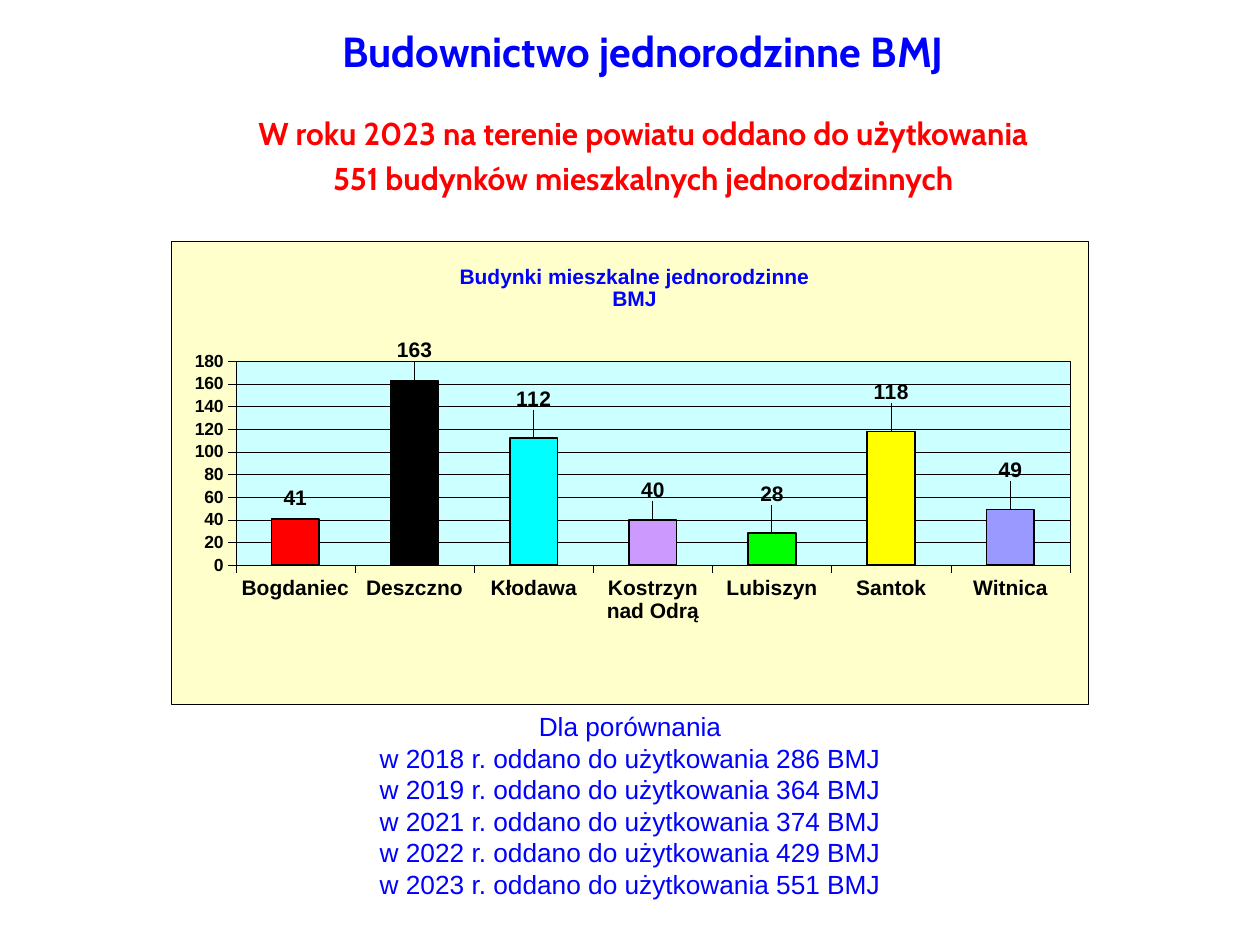
from dataclasses import dataclass

from lxml.etree import _Element as Element
from pptx import Presentation
from pptx.chart.chart import Chart
from pptx.chart.data import CategoryChartData
from pptx.dml.color import RGBColor
from pptx.dml.line import LineFormat
from pptx.enum.chart import XL_CHART_TYPE as ChartType
from pptx.enum.chart import XL_LABEL_POSITION as LabelPosition
from pptx.enum.chart import XL_TICK_MARK as TickMark
from pptx.enum.text import PP_ALIGN as Align
from pptx.oxml import parse_xml
from pptx.oxml.ns import nsdecls, qn
from pptx.slide import Slide
from pptx.text.text import Font
from pptx.util import Inches, Pt

WIDTH, HEIGHT = Inches(10), Inches(7.5)
COLUMN, ROW = WIDTH / 100, HEIGHT / 100
BLUE, RED, BLACK = "0000FF", "FF0000", "000000"


@dataclass(frozen=True)
class Area:
    column: float
    row: float
    columns: float
    rows: float

    def emu(self) -> tuple[int, int, int, int]:
        return (int(self.column * COLUMN), int(self.row * ROW),
                int(self.columns * COLUMN), int(self.rows * ROW))


@dataclass(frozen=True)
class Line:
    text: str
    size: float
    color: str
    font: str = "Arial"
    bold: bool = False
    before: float = 0
    pitch: float | None = None


@dataclass(frozen=True)
class Commune:
    name: str
    buildings: int
    color: str
    label_rise: float


HEADING = [
    Line("Budownictwo jednorodzinne BMJ", 24, BLUE, "Cabin", True),
    Line("W roku 2023 na terenie powiatu oddano do użytkowania",
         18, RED, "Cabin", True, 22),
    Line("551 budynków mieszkalnych jednorodzinnych", 18, RED, "Cabin", True, 4),
]
YEARS = {2018: 286, 2019: 364, 2021: 374, 2022: 429, 2023: 551}
COMPARISON = [Line(text, 15, BLUE, pitch=18) for text in (
    "Dla porównania",
    *(f"w {year} r. oddano do użytkowania {count} BMJ"
      for year, count in YEARS.items()))]
COMMUNES = [
    Commune("Bogdaniec", 41, "FF0000", 0.01),
    Commune("Deszczno", 163, "000000", 0.03),
    Commune("Kłodawa", 112, "00FFFF", 0.05),
    Commune("Kostrzyn nad Odrą", 40, "CC99FF", 0.03),
    Commune("Lubiszyn", 28, "00FF00", 0.05),
    Commune("Santok", 118, "FFFF00", 0.05),
    Commune("Witnica", 49, "9999FF", 0.05),
]


def rgb(color: str) -> RGBColor:
    return RGBColor.from_string(color)


def style(font: Font, size: float, color: str = BLACK,
          name: str = "Arial", bold: bool = True) -> None:
    font.size, font.name, font.bold = Pt(size), name, bold
    font.color.rgb = rgb(color)


def stroke(line: LineFormat, width: float = 0.25) -> None:
    line.color.rgb = rgb(BLACK)
    line.width = Pt(width)


def add_lines(slide: Slide, area: Area, lines: list[Line]) -> None:
    frame = slide.shapes.add_textbox(*area.emu()).text_frame
    frame.word_wrap = True
    for number, line in enumerate(lines):
        paragraph = frame.add_paragraph() if number else frame.paragraphs[0]
        paragraph.text = line.text
        paragraph.alignment = Align.CENTER
        paragraph.space_before = Pt(line.before)
        if line.pitch:
            paragraph.line_spacing = Pt(line.pitch)
        style(paragraph.font, line.size, line.color, line.font, line.bold)


def place(parent: Element, index: int, **settings: float | str) -> None:
    for previous in parent.findall(qn("c:layout")):
        parent.remove(previous)
    values = "".join(f'<c:{tag} val="{value}"/>' for tag, value in settings.items())
    parent.insert(index, parse_xml(
        f'<c:layout {nsdecls("c")}><c:manualLayout>{values}'
        "</c:manualLayout></c:layout>"))


def background(color: str) -> Element:
    return parse_xml(
        f'<c:spPr {nsdecls("c", "a")}><a:solidFill><a:srgbClr val="{color}"/>'
        f'</a:solidFill><a:ln w="{Pt(0.25)}"><a:solidFill><a:srgbClr val="{BLACK}"/>'
        "</a:solidFill></a:ln></c:spPr>")


def style_axes(chart: Chart) -> None:
    for axis, size in ((chart.category_axis, 12), (chart.value_axis, 10)):
        axis.major_tick_mark = TickMark.OUTSIDE
        axis.minor_tick_mark = TickMark.NONE
        style(axis.tick_labels.font, size)
        stroke(axis.format.line)
    counts = chart.value_axis
    counts.minimum_scale, counts.maximum_scale, counts.major_unit = 0, 180, 20
    stroke(counts.major_gridlines.format.line)


def style_columns(chart: Chart) -> None:
    plot = chart.plots[0]
    plot.gap_width = 150
    plot.vary_by_categories = False
    columns = plot.series[0]
    for number, commune in enumerate(COMMUNES):
        column = columns.points[number]
        column.format.fill.solid()
        column.format.fill.fore_color.rgb = rgb(commune.color)
        stroke(column.format.line, 1)
        style(column.data_label.font, 12)
        column.data_label.position = LabelPosition.OUTSIDE_END
    labels = columns.data_labels
    labels.show_value = True
    style(labels.font, 12)
    for label, commune in zip(labels._element.findall(qn("c:dLbl")), COMMUNES):
        place(label, 1, x=0, y=-commune.label_rise)


def add_buildings_chart(slide: Slide, area: Area) -> None:
    data = CategoryChartData()
    data.categories = [commune.name for commune in COMMUNES]
    data.add_series("BMJ", [commune.buildings for commune in COMMUNES])
    chart = slide.shapes.add_chart(
        ChartType.COLUMN_CLUSTERED, *area.emu(), data).chart
    chart.has_legend = False
    style(chart.font, 10)
    title = chart.chart_title
    title.text_frame.text = "Budynki mieszkalne jednorodzinne"
    title.text_frame.add_paragraph().text = "BMJ"
    for paragraph in title.text_frame.paragraphs:
        paragraph.alignment = Align.CENTER
        style(paragraph.font, 12, BLUE)
    place(title._element, 1, xMode="edge", yMode="edge", x=0.31, y=0.04)
    style_axes(chart)
    style_columns(chart)
    space = chart._chartSpace
    plot_area = space.chart.plotArea
    place(plot_area, 0, layoutTarget="inner", xMode="edge", yMode="edge",
          x=0.07, y=0.26, w=0.91, h=0.44)
    plot_area.append(background("CCFFFF"))
    space.chart.addnext(background("FFFFCC"))


def main() -> None:
    deck = Presentation()
    deck.slide_width, deck.slide_height = WIDTH, HEIGHT
    slide = deck.slides.add_slide(deck.slide_layouts[6])
    add_lines(slide, Area(9.8, 2, 82.5, 20), HEADING)
    add_lines(slide, Area(5.5, 74.53, 89, 21.6), COMPARISON)
    add_buildings_chart(slide, Area(13.6, 25.47, 72.8, 49.07))
    deck.save("out.pptx")


if __name__ == "__main__":
    main()
